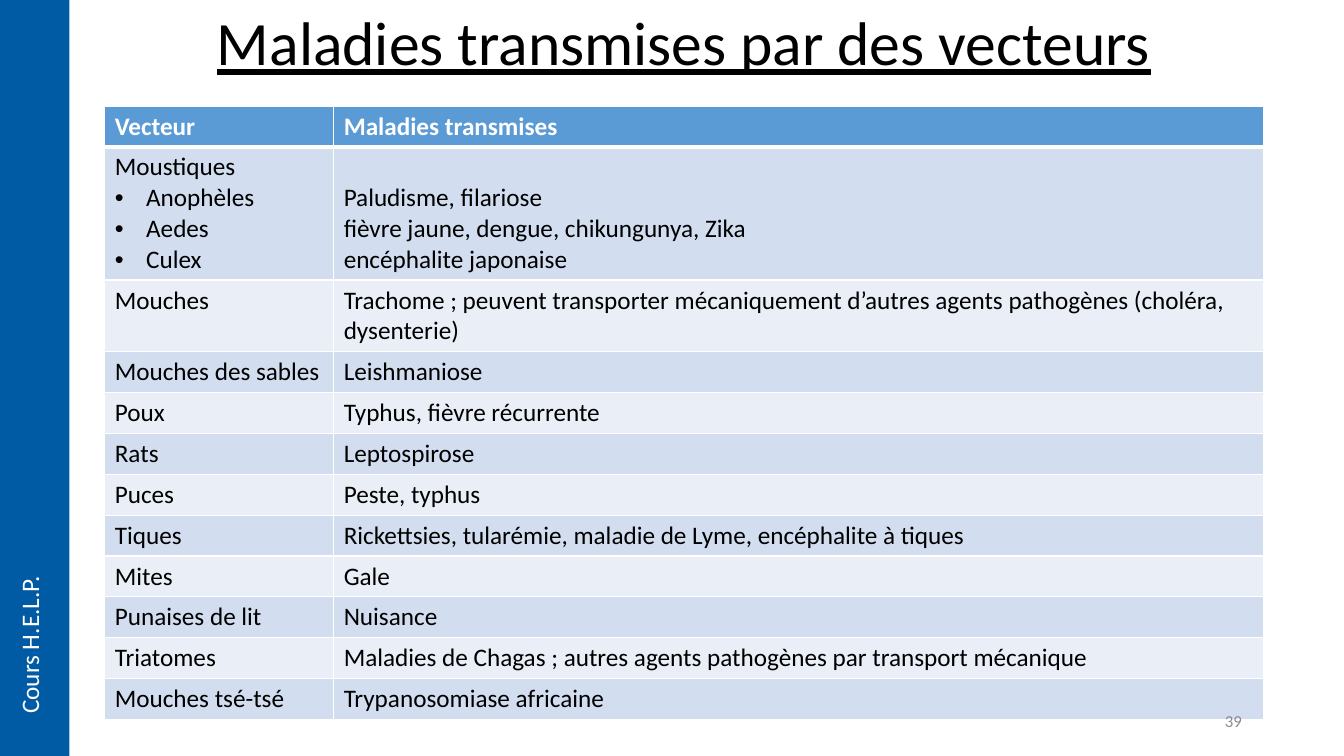
from pptx import Presentation
from pptx.dml.color import RGBColor as Rgb
from pptx.enum.shapes import MSO_SHAPE as Shape
from pptx.enum.text import MSO_ANCHOR as Anchor, PP_ALIGN as Align
from pptx.oxml.ns import qn
from pptx.util import Cm, Pt
from lxml.etree import SubElement as Sub

TITLE = "Maladies transmises par des vecteurs"
COURSE = "Cours H.E.L.P."
PAGE = "39"
HEAD = ("Vecteur", "Maladies transmises")
ROWS = [
    (["Moustiques", "Anophèles", "Aedes", "Culex"],
     ["Paludisme, filariose", "fièvre jaune, dengue, chikungunya, Zika",
      "encéphalite japonaise"]),
    (["Mouches"], ["Trachome ; peuvent transporter mécaniquement d’autres "
                   "agents pathogènes (choléra, dysenterie)"]),
    (["Mouches des sables"], ["Leishmaniose"]),
    (["Poux"], ["Typhus, fièvre récurrente"]),
    (["Rats"], ["Leptospirose"]),
    (["Puces"], ["Peste, typhus"]),
    (["Tiques"], ["Rickettsies, tularémie, maladie de Lyme, encéphalite à tiques"]),
    (["Mites"], ["Gale"]),
    (["Punaises de lit"], ["Nuisance"]),
    (["Triatomes"], ["Maladies de Chagas ; autres agents pathogènes "
                     "par transport mécanique"]),
    (["Mouches tsé-tsé"], ["Trypanosomiase africaine"]),
]
COLORS = {"head": "5B9BD5", "odd": "D2DEEF", "even": "EAEFF7", "bar": "005BA4",
          "white": "FFFFFF", "black": "000000", "grey": "8C8C8C"}
FONT = "Calibri"
LEFT, WIDE = 2.64, 29.2
COLS = (5.77, 23.44)
ROW, TALL, PAIR = 1.03, 3.33, 1.79


def color(name):
    return Rgb.from_string(COLORS[name])


def write(para, text, size, tint, bold=False, line=False):
    run = para.add_run()
    run.text = text
    font = run.font
    font.name, font.size, font.bold, font.underline = FONT, Pt(size), bold, line
    font.color.rgb = color(tint)


def bullet(para):
    props = para._p.get_or_add_pPr()
    props.set("marL", str(Cm(0.79)))
    props.set("indent", str(Cm(-0.79)))
    Sub(props, qn("a:buFont"), typeface="Arial")
    Sub(props, qn("a:buChar"), char="•")


def border(cell, base):
    props = cell._tc.get_or_add_tcPr()
    for side, width in (("L", 1), ("R", 1), ("T", 1), ("B", base)):
        line = Sub(props, qn("a:ln" + side), w=str(Pt(width)))
        fill = Sub(line, qn("a:solidFill"))
        Sub(fill, qn("a:srgbClr"), val=COLORS["white"])


def fill_cell(cell, lines, tint, ink="black", head=False):
    border(cell, 3 if head else 1)
    cell.fill.solid()
    cell.fill.fore_color.rgb = color(tint)
    frame = cell.text_frame
    for n, text in enumerate(lines):
        para = frame.add_paragraph() if n else frame.paragraphs[0]
        if n and lines[0] == "Moustiques":
            bullet(para)
        write(para, text, 18, ink, bold=head)


def add_grid(slide):
    count = len(ROWS) + 1
    highs = [ROW, TALL, PAIR] + [ROW] * (count - 3)
    grid = slide.shapes.add_table(count, 2, Cm(LEFT), Cm(2.67),
                                  Cm(WIDE), Cm(sum(highs))).table
    grid.horz_banding = False
    for col, width in zip(grid.columns, COLS):
        col.width = Cm(width)
    for row, high in zip(grid.rows, highs):
        row.height = Cm(high)
    for c, text in enumerate(HEAD):
        fill_cell(grid.cell(0, c), [text], "head", "white", True)
    for r, row in enumerate(ROWS, 1):
        for c, lines in enumerate(row):
            fill_cell(grid.cell(r, c), lines, "odd" if r % 2 else "even")
    grid.cell(1, 1).vertical_anchor = Anchor.BOTTOM


def add_text(slide, area, text, size, tint, align, wrap=True, line=False):
    frame = slide.shapes.add_textbox(*map(Cm, area)).text_frame
    frame.word_wrap = wrap
    para = frame.paragraphs[0]
    para.alignment = align
    write(para, text, size, tint, line=line)
    return frame


def main():
    """Build the slide on vector-borne diseases."""
    deck = Presentation()
    deck.slide_width, deck.slide_height = Cm(33.87), Cm(19.05)
    slide = deck.slides.add_slide(deck.slide_layouts[6])
    add_grid(slide)

    title = add_text(slide, (LEFT, 0, WIDE, 2.31), TITLE, 44, "black",
                     Align.CENTER, line=True)
    title.vertical_anchor = Anchor.MIDDLE
    title.paragraphs[0].line_spacing = 0.9

    bar = slide.shapes.add_shape(Shape.RECTANGLE, 0, 0, Cm(1.75), Cm(19.05))
    bar.shadow.inherit = False
    bar.fill.solid()
    bar.fill.fore_color.rgb = color("bar")
    bar.line.fill.background()

    course = add_text(slide, (0.23, 14.1, 1.27, 4.14), COURSE, 18, "white",
                      Align.LEFT, wrap=False)
    course._txBody.bodyPr.set("vert", "vert270")

    page = add_text(slide, (23.93, 17.65, 7.62, 1.02), PAGE, 12, "grey", Align.RIGHT)
    page.vertical_anchor = Anchor.MIDDLE
    deck.save("out.pptx")


if __name__ == "__main__":
    main()
